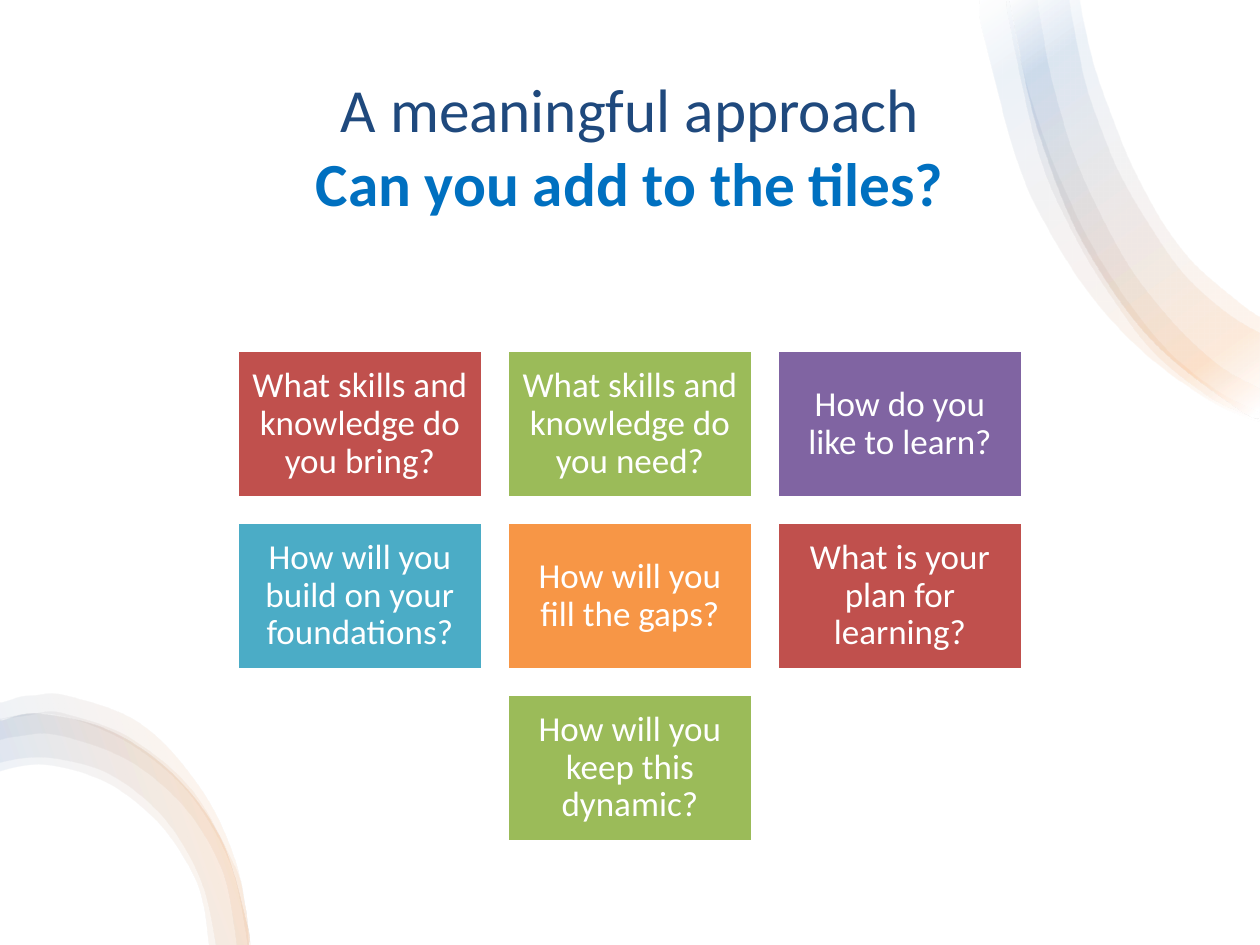
"""Build a slide of seven question tiles framed by two translucent swooshes."""
from lxml import etree
from pptx import Presentation
from pptx.dml.color import RGBColor
from pptx.enum.shapes import MSO_SHAPE
from pptx.enum.text import MSO_ANCHOR, PP_ALIGN
from pptx.oxml.ns import qn
from pptx.util import Pt

RECTANGLE = MSO_SHAPE.RECTANGLE
MIDDLE = MSO_ANCHOR.MIDDLE
CENTER = PP_ALIGN.CENTER

WHITE = RGBColor(0xFF, 0xFF, 0xFF)
NAVY = RGBColor(0x1F, 0x49, 0x7D)
BRIGHT_BLUE = RGBColor(0x00, 0x70, 0xC0)
BLUE = RGBColor(0x4F, 0x81, 0xBD)
RED = RGBColor(0xC0, 0x50, 0x4D)
GREEN = RGBColor(0x9B, 0xBB, 0x59)
PURPLE = RGBColor(0x80, 0x64, 0xA2)
TEAL = RGBColor(0x4B, 0xAC, 0xC6)
ORANGE = RGBColor(0xF7, 0x96, 0x46)

FONT = "Calibri"
SWOOSH_STOPS = [(2, WHITE), (16, ORANGE), (85, BLUE), (100, WHITE)]
SWOOSH_OPACITY = 10

TOP_OUTER = [(720, 239), (707, 233), (661, 197), (622, 144), (594, 77), (577, 0)]
BOTTOM_OUTER = [(142, 540), (141, 529), (127, 482), (100, 444), (63, 418), (22, 408), (0, 412)]

TOP_BANDS = [
    ([(720, 241), (693, 230), (660, 207), (629, 176), (603, 138), (582, 94), (562, 19), (560, 0)],
     [(577, 0), (584, 37), (598, 83), (616, 125), (638, 163), (664, 197), (695, 223), (720, 236)]),
    (TOP_OUTER,
     [(617, 0), (626, 40), (641, 81), (659, 118), (680, 148), (706, 171), (720, 181)]),
    ([(720, 240), (690, 226), (660, 202), (634, 168), (611, 129), (593, 86), (577, 14), (575, 0)],
     [(593, 0), (598, 32), (609, 75), (626, 117), (645, 152), (670, 184), (697, 209), (720, 222)]),
    (TOP_OUTER,
     [(611, 0), (619, 42), (634, 86), (654, 124), (677, 157), (703, 180), (720, 190)]),
]
BOTTOM_BANDS = [
    (BOTTOM_OUTER,
     [(0, 441), (22, 437), (58, 446), (89, 469), (112, 504), (119, 540)]),
    (BOTTOM_OUTER,
     [(0, 436), (22, 433), (59, 441), (92, 466), (114, 502), (123, 540)]),
    ([(142, 540), (140, 518), (133, 493), (109, 451), (76, 423), (37, 408), (17, 408), (0, 411)],
     [(0, 423), (17, 420), (36, 421), (72, 434), (104, 460), (127, 498), (135, 540)]),
    ([(143, 540), (135, 495), (113, 449), (80, 414), (38, 398), (17, 398), (0, 402)],
     [(0, 412), (17, 409), (37, 410), (75, 426), (108, 454), (132, 496), (141, 540)]),
]
SWOOSHES = [(TOP_BANDS, 125), (BOTTOM_BANDS, 200)]

TILES = [
    ("What skills and knowledge do you bring?", RED, 0, 0),
    ("What skills and knowledge do you need?", GREEN, 1, 0),
    ("How do you like to learn?", PURPLE, 2, 0),
    ("How will you build on your foundations?", TEAL, 0, 1),
    ("How will you fill the gaps?", ORANGE, 1, 1),
    ("What is your plan for learning?", RED, 2, 1),
    ("How will you keep this dynamic?", GREEN, 1, 2),
]
TILE_LEFT, TILE_TOP = 135.5, 200.2
TILE_WIDTH, TILE_HEIGHT = 140.3, 84.2
TILE_GAP = 14


def round_edges(band, outer_count):
    """Turn the straight segments along both edges of a band into curves."""
    segments = list(next(band.element.iter(qn("a:path"))))[:-1]
    knots = [(int(segment[0].get("x")), int(segment[0].get("y"))) for segment in segments]
    for first, last in ((0, outer_count), (outer_count, len(knots))):
        edge = knots[first:last]
        padded = [edge[0], *edge, edge[-1]]
        windows = zip(padded, padded[1:], padded[2:], padded[3:])
        for segment, (before, start, end, after) in zip(segments[first + 1:last], windows):
            segment.tag = qn("a:cubicBezTo")
            leaving = [s + (e - b) // 6 for b, s, e in zip(before, start, end)]
            arriving = [e - (a - s) // 6 for s, e, a in zip(start, end, after)]
            for index, (x, y) in enumerate((leaving, arriving)):
                segment.insert(index, etree.Element(qn("a:pt"), x=str(x), y=str(y)))


def fill_swoosh(band, angle):
    """Give a band the translucent gradient of the swooshes."""
    band.fill.gradient()
    band.fill.gradient_angle = angle
    stops = next(band.element.iter(qn("a:gsLst")))
    for stop in list(stops):
        stops.remove(stop)
    for position, color in SWOOSH_STOPS:
        stop = etree.SubElement(stops, qn("a:gs"), pos=str(position * 1000))
        shade = etree.SubElement(stop, qn("a:srgbClr"), val=str(color))
        etree.SubElement(shade, qn("a:alpha"), val=str(SWOOSH_OPACITY * 1000))


deck = Presentation()
deck.slide_width, deck.slide_height = Pt(720), Pt(540)
page = deck.slides.add_slide(deck.slide_layouts[6])

backdrop = page.shapes.add_shape(RECTANGLE, 0, 0, Pt(720), Pt(540))
backdrop.shadow.inherit = False
backdrop.fill.solid()
backdrop.fill.fore_color.rgb = WHITE
backdrop.line.fill.background()

title = page.shapes.add_textbox(Pt(47.5), Pt(36), Pt(625), Pt(93.6))
title.text_frame.word_wrap = True
title.text_frame.vertical_anchor = MIDDLE
para = title.text_frame.paragraphs[0]
para.alignment = CENTER
para.font.name = FONT
para.font.size = Pt(35)
span = para.add_run()
span.text = "A meaningful approach"
span.font.color.rgb = NAVY
para.add_line_break()
span = para.add_run()
span.text = "Can you add to the tiles?"
span.font.bold = True
span.font.color.rgb = BRIGHT_BLUE

for bands, angle in SWOOSHES:
    for outer, inner in bands:
        builder = page.shapes.build_freeform(*outer[0], scale=Pt(1))
        builder.add_line_segments(outer[1:] + inner, close=True)
        band = builder.convert_to_shape()
        round_edges(band, len(outer))
        band.shadow.inherit = False
        band.line.fill.background()
        fill_swoosh(band, angle)

for question, color, column, row in TILES:
    left = TILE_LEFT + column * (TILE_WIDTH + TILE_GAP)
    top = TILE_TOP + row * (TILE_HEIGHT + TILE_GAP)
    tile = page.shapes.add_shape(RECTANGLE, Pt(left), Pt(top), Pt(TILE_WIDTH), Pt(TILE_HEIGHT))
    tile.shadow.inherit = False
    tile.fill.solid()
    tile.fill.fore_color.rgb = color
    tile.line.color.rgb = WHITE
    tile.line.width = Pt(2)
    frame = tile.text_frame
    frame.word_wrap = True
    frame.vertical_anchor = MIDDLE
    frame.margin_left = frame.margin_right = frame.margin_top = frame.margin_bottom = Pt(6)
    para = frame.paragraphs[0]
    para.text = question
    para.alignment = CENTER
    para.line_spacing = 0.9
    para.font.name = FONT
    para.font.size = Pt(20)
    para.font.color.rgb = WHITE

deck.save("out.pptx")
